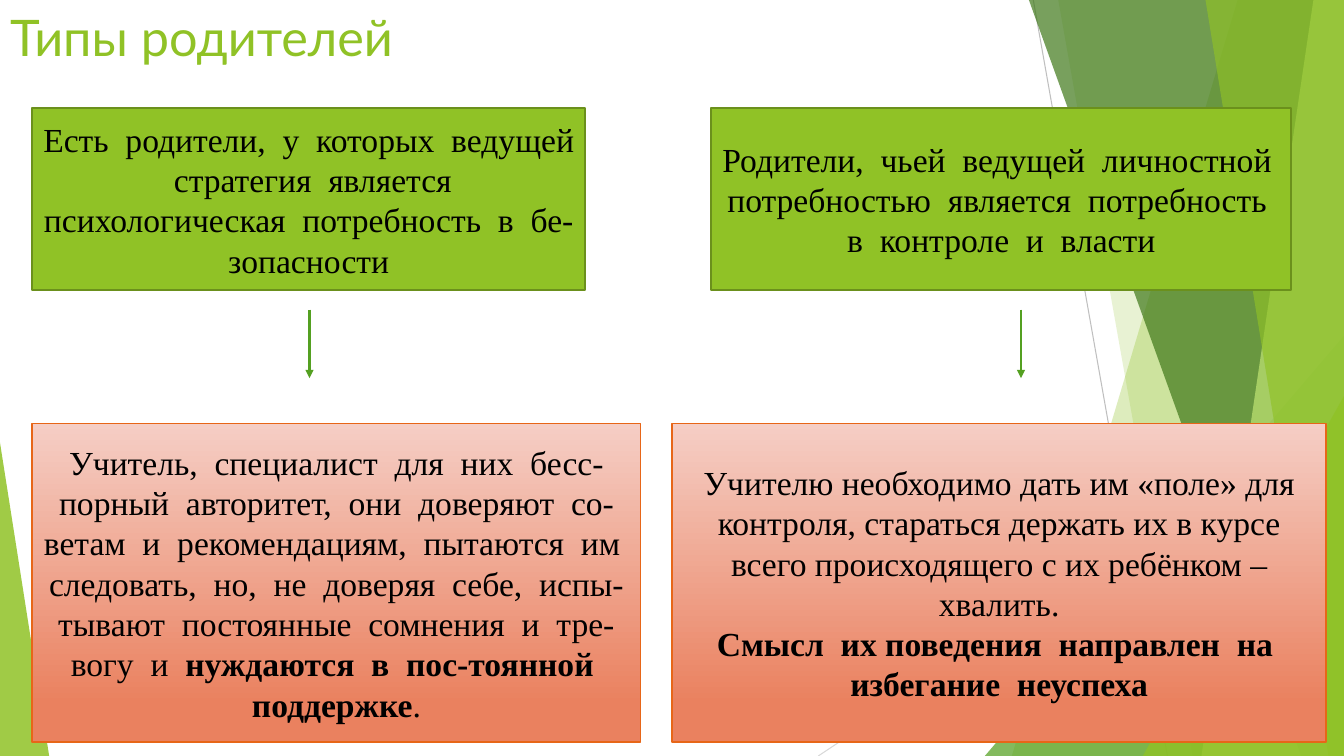
from dataclasses import dataclass

import lxml.etree
import pptx
import pptx.dml.color
import pptx.enum.dml
import pptx.enum.shapes
import pptx.enum.text
import pptx.oxml.ns
import pptx.util
from pptx.util import Cm


@dataclass(frozen=True)
class Theme:
    lime: str = "90C226"
    pale_lime: str = "C0E474"
    green: str = "54A021"
    forest: str = "3F7819"
    olive: str = "6B901C"
    orange: str = "E76618"
    blush: str = "F5CEC5"
    coral: str = "EA815F"
    text: str = "000000"
    grey: str = "BFBFBF"
    light_grey: str = "D9D9D9"
    title_font: str = "Lato"
    body_font: str = "Times New Roman"
    title_size: int = 36
    body_size: int = 24


@dataclass(frozen=True)
class Line:
    x1: float
    y1: float
    x2: float
    y2: float
    color: str
    width: float
    arrow: bool = False


@dataclass(frozen=True)
class Wedge:
    top_x: float
    bottom_x: float
    color: str
    alpha: int


@dataclass(frozen=True)
class Corner:
    left: float
    top: float
    width: float
    peak: float
    color: str
    alpha: int


@dataclass(frozen=True)
class Run:
    text: str
    bold: bool = False


@dataclass(frozen=True)
class Card:
    left: float
    top: float
    width: float
    height: float
    fills: tuple[str, ...]
    border: str
    border_width: float
    paragraphs: tuple[tuple[Run, ...], ...]


THEME = Theme()
WIDTH, HEIGHT = 33.87, 19.05
TYPE_TOP, TYPE_HEIGHT = 2.72, 4.6
ADVICE_TOP, ADVICE_HEIGHT = 10.67, 8.03
ARROW_TOP, ARROW_BOTTOM = 7.8, 9.53

BACKDROP_LINES = (
    Line(26.04, 0, 29.42, HEIGHT, THEME.grey, 0.75),
    Line(WIDTH, 10.24, 20.62, HEIGHT, THEME.light_grey, 0.75),
)
FACETS: tuple[Wedge | Corner, ...] = (
    Wedge(31.19, 25.5, THEME.lime, 30),
    Wedge(26.67, 30.05, THEME.lime, 20),
    Corner(24.82, 8.46, 9.05, 1, THEME.green, 72),
    Wedge(25.93, 32.79, THEME.forest, 70),
    Wedge(33.1, 30.28, THEME.pale_lime, 70),
    Wedge(30.38, 33.48, THEME.lime, 65),
    Corner(28.8, 9.98, 5.07, 1, THEME.lime, 80),
    Corner(0, 11.15, 1.24, 0, THEME.lime, 85),
)
ARROWS = tuple(
    Line(x, ARROW_TOP, x, ARROW_BOTTOM, THEME.green, 1.5, True) for x in (7.8, 25.73)
)


def type_card(left: float, width: float, text: str) -> Card:
    return Card(left, TYPE_TOP, width, TYPE_HEIGHT, (THEME.lime,), THEME.olive, 1.5,
                ((Run(text),),))


def advice_card(left: float, width: float, *paragraphs: tuple[Run, ...]) -> Card:
    return Card(left, ADVICE_TOP, width, ADVICE_HEIGHT, (THEME.blush, THEME.coral),
                THEME.orange, 1, paragraphs)


CARDS = (
    type_card(0.81, 13.94, "Есть  родители,  у  которых  ведущей  стратегия  является "
              "психологическая  потребность  в  бе-зопасности"),
    type_card(17.93, 14.61, "Родители,  чьей  ведущей  личностной  потребностью  "
              "является  потребность  в  контроле  и  власти"),
    advice_card(
        0.81, 15.34,
        (Run("Учитель,  специалист  для  них  бесс-порный  авторитет,  они  доверяют  "
             "со-ветам  и  рекомендациям,  пытаются  им  следовать,  но,  не  доверяя  "
             "себе,  испы-тывают  постоянные  сомнения  и  тре-вогу  и  "),
         Run("нуждаются  в  пос-тоянной  поддержке", True),
         Run("."))),
    advice_card(
        16.94, 16.48,
        (Run("Учителю необходимо дать им «поле» для контроля, стараться держать их "
             "в курсе всего происходящего с их ребёнком – хвалить."),),
        (Run("Смысл  их поведения  направлен  на  избегание  неуспеха", True),)),
)


def rgb(color: str) -> pptx.dml.color.RGBColor:
    return pptx.dml.color.RGBColor.from_string(color)


def add_line(slide, line: Line) -> None:
    sp = slide.shapes.add_connector(
        pptx.enum.shapes.MSO_CONNECTOR.STRAIGHT,
        Cm(line.x1), Cm(line.y1), Cm(line.x2), Cm(line.y2))
    sp.line.color.rgb = rgb(line.color)
    sp.line.width = pptx.util.Pt(line.width)
    if line.arrow:
        ln = sp.line._get_or_add_ln()
        lxml.etree.SubElement(ln, pptx.oxml.ns.qn("a:tailEnd"), type="triangle")
    lxml.etree.SubElement(sp._element.spPr, pptx.oxml.ns.qn("a:effectLst"))


def add_facet(slide, facet: Wedge | Corner) -> None:
    if isinstance(facet, Wedge):
        builder = slide.shapes.build_freeform(Cm(facet.top_x), 0)
        builder.add_line_segments([(Cm(WIDTH), 0), (Cm(WIDTH), Cm(HEIGHT)),
                                   (Cm(facet.bottom_x), Cm(HEIGHT))])
        sp = builder.convert_to_shape()
    else:
        sp = slide.shapes.add_shape(
            pptx.enum.shapes.MSO_SHAPE.ISOSCELES_TRIANGLE,
            Cm(facet.left), Cm(facet.top), Cm(facet.width), Cm(HEIGHT - facet.top))
        sp.adjustments[0] = facet.peak
    sp.shadow.inherit = False
    sp.line.fill.background()
    sp.fill.solid()
    sp.fill.fore_color.rgb = rgb(facet.color)
    color = sp._element.spPr.find(".//" + pptx.oxml.ns.qn("a:srgbClr"))
    lxml.etree.SubElement(color, pptx.oxml.ns.qn("a:alpha"), val=str(facet.alpha * 1000))


def add_run(p, text: str, font: str, size: int, color: str, bold: bool = False) -> None:
    r = p.add_run()
    r.text = text
    r.font.name = font
    r.font.size = pptx.util.Pt(size)
    r.font.color.rgb = rgb(color)
    r.font.bold = bold


def add_card(slide, card: Card) -> None:
    sp = slide.shapes.add_shape(
        pptx.enum.shapes.MSO_SHAPE.RECTANGLE,
        Cm(card.left), Cm(card.top), Cm(card.width), Cm(card.height))
    sp.shadow.inherit = False
    if len(card.fills) == 1:
        sp.fill.solid()
        sp.fill.fore_color.rgb = rgb(card.fills[0])
    else:
        sp.fill.gradient()
        sp.fill.gradient_angle = 270
        for stop, color, position in zip(sp.fill.gradient_stops, card.fills, (0, 0.88)):
            stop.color.rgb = rgb(color)
            stop.position = position
    sp.line.color.rgb = rgb(card.border)
    sp.line.width = pptx.util.Pt(card.border_width)
    tf = sp.text_frame
    tf.word_wrap = True
    tf.vertical_anchor = pptx.enum.text.MSO_ANCHOR.MIDDLE
    for i, runs in enumerate(card.paragraphs):
        p = tf.add_paragraph() if i else tf.paragraphs[0]
        p.alignment = pptx.enum.text.PP_ALIGN.CENTER
        for run in runs:
            add_run(p, run.text, THEME.body_font, THEME.body_size, THEME.text, run.bold)


def set_title(slide, text: str) -> None:
    sp = slide.shapes.title
    sp.left, sp.top, sp.width, sp.height = Cm(0), Cm(0), Cm(10.9), Cm(1.83)
    tf = sp.text_frame
    tf.word_wrap = True
    tf.vertical_anchor = pptx.enum.text.MSO_ANCHOR.MIDDLE
    p = tf.paragraphs[0]
    p.alignment = pptx.enum.text.PP_ALIGN.LEFT
    add_run(p, text, THEME.title_font, THEME.title_size, THEME.lime)


def main() -> None:
    prs = pptx.Presentation()
    prs.slide_width, prs.slide_height = Cm(WIDTH), Cm(HEIGHT)
    s = prs.slides.add_slide(prs.slide_layouts[5])
    set_title(s, "Типы родителей")
    for line in BACKDROP_LINES:
        add_line(s, line)
    for facet in FACETS:
        add_facet(s, facet)
    for card in CARDS:
        add_card(s, card)
    for arrow in ARROWS:
        add_line(s, arrow)
    prs.save("out.pptx")


if __name__ == "__main__":
    main()
